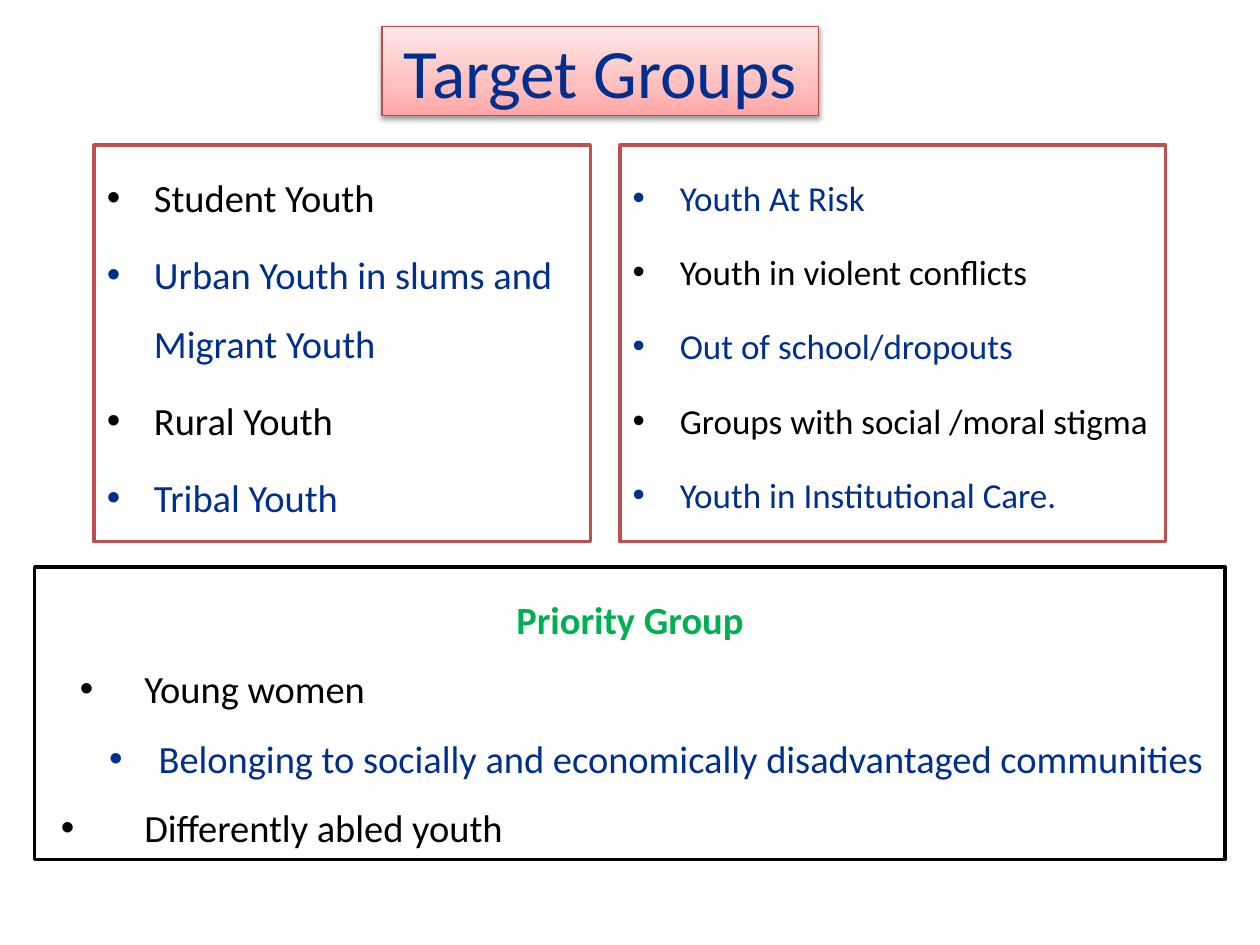
from lxml.etree import fromstring
from pptx import Presentation
from pptx.dml.color import RGBColor
from pptx.enum.shapes import MSO_SHAPE
from pptx.enum.text import MSO_ANCHOR, MSO_AUTO_SIZE, PP_ALIGN
from pptx.oxml.ns import qn
from pptx.util import Cm, Pt

NAVY = RGBColor(0x00, 0x2F, 0x8E)
BLACK = RGBColor(0x00, 0x00, 0x00)
WHITE = RGBColor(0xFF, 0xFF, 0xFF)
GREEN = RGBColor(0x00, 0xB0, 0x50)
RED = RGBColor(0xC0, 0x50, 0x4D)
ROSE = RGBColor(0xBF, 0x4C, 0x48)
STOPS = [(0, "FFA6A5"), (35, "FFC0BF"), (100, "FFE7E7")]
NS = 'xmlns:a="http://schemas.openxmlformats.org/drawingml/2006/main"'


class Deck:
    """Holds the style and the current slide."""
    font = "Calibri"

    def __init__(self):
        self.prs = Presentation()
        self.prs.slide_width, self.prs.slide_height = Cm(25.4), Cm(19.05)
        self.slide = self.prs.slides.add_slide(self.prs.slide_layouts[3])

    def place(self, shape, box, edge, width):
        shape.left, shape.top, shape.width, shape.height = map(Cm, box)
        shape.fill.solid()
        shape.fill.fore_color.rgb = WHITE
        shape.line.color.rgb = edge
        shape.line.width = Pt(width)
        frame = shape.text_frame
        frame.word_wrap = True
        frame.auto_size = MSO_AUTO_SIZE.NONE
        return frame

    def add_text(self, para, text, size, color, bold=False):
        run = para.add_run()
        run.text = text
        font = run.font
        font.name, font.size, font.bold = self.font, Pt(size), bold
        font.color.rgb = color

    def bullet(self, para, left, hang):
        props = para._p.get_or_add_pPr()
        props.set("marL", str(Cm(left)))
        props.set("indent", str(-Cm(hang)))
        props.append(fromstring(f'<a:buFont {NS} typeface="Arial"/>'))
        props.append(fromstring(f'<a:buChar {NS} char="•"/>'))

    def title(self, text, box):
        shape = self.slide.shapes.title
        frame = self.place(shape, box, ROSE, 0.75)
        frame.vertical_anchor = MSO_ANCHOR.MIDDLE
        para = frame.paragraphs[0]
        para.alignment = PP_ALIGN.CENTER
        self.add_text(para, text, 39.6, NAVY)
        # Gradient fill and soft shadow
        props = shape._element.spPr
        stops = "".join(f'<a:gs pos="{at * 1000}"><a:srgbClr val="{tint}"/></a:gs>'
                        for at, tint in STOPS)
        props.replace(props.find(qn("a:solidFill")), fromstring(
            f'<a:gradFill {NS} rotWithShape="1"><a:gsLst>{stops}</a:gsLst>'
            '<a:lin ang="16200000" scaled="0"/></a:gradFill>'))
        props.append(fromstring(
            f'<a:effectLst {NS}><a:outerShdw blurRad="{Pt(3.1)}" dist="{Pt(1.6)}" '
            'dir="5400000" rotWithShape="0"><a:srgbClr val="000000">'
            '<a:alpha val="38000"/></a:srgbClr></a:outerShdw></a:effectLst>'))

    def bullets(self, index, box, items, size, gap, colors):
        frame = self.place(self.slide.placeholders[index], box, RED, 2)
        for i, item in enumerate(items):
            para = frame.add_paragraph() if i else frame.paragraphs[0]
            para.line_spacing = gap
            para.space_before = Pt(size * 0.2)
            self.bullet(para, 0.95, 0.95)
            self.add_text(para, item, size, colors[i % 2])

    def panel(self, head, box, items, size):
        shape = self.slide.shapes.add_shape(MSO_SHAPE.RECTANGLE, *map(Cm, box))
        shape.shadow.inherit = False
        frame = self.place(shape, box, BLACK, 2)
        frame.vertical_anchor = MSO_ANCHOR.TOP
        para = frame.paragraphs[0]
        para.alignment, para.line_spacing = PP_ALIGN.CENTER, 1.5
        self.add_text(para, head, size, GREEN, True)
        for text, color, left, hang in items:
            para = frame.add_paragraph()
            para.alignment, para.line_spacing = PP_ALIGN.JUSTIFY, 1.5
            self.bullet(para, left, hang)
            self.add_text(para, text, size, color)


def main():
    deck = Deck()
    # Heading
    deck.title("Target Groups", (7.7, 0.53, 8.8, 1.8))
    # Two lists side by side
    deck.bullets(1, (1.9, 2.92, 10, 8), [
        "Student Youth", "Urban Youth in slums and Migrant Youth",
        "Rural Youth", "Tribal Youth"], 22, 1.5, (BLACK, NAVY))
    deck.bullets(2, (12.5, 2.92, 11, 8), [
        "Youth At Risk", "Youth in violent conflicts",
        "Out of school/dropouts", "Groups with social /moral stigma",
        "Youth in Institutional Care."], 20, 1.6, (NAVY, BLACK))
    # Priority panel
    deck.panel("Priority Group", (0.7, 11.43, 24, 5.9), [
        ("Young women", BLACK, 1.96, 1.3),
        ("Belonging to socially and economically disadvantaged communities",
         NAVY, 2.25, 1),
        ("Differently abled youth", BLACK, 1.96, 1.68)], 22)
    deck.prs.save("out.pptx")


if __name__ == "__main__":
    main()
